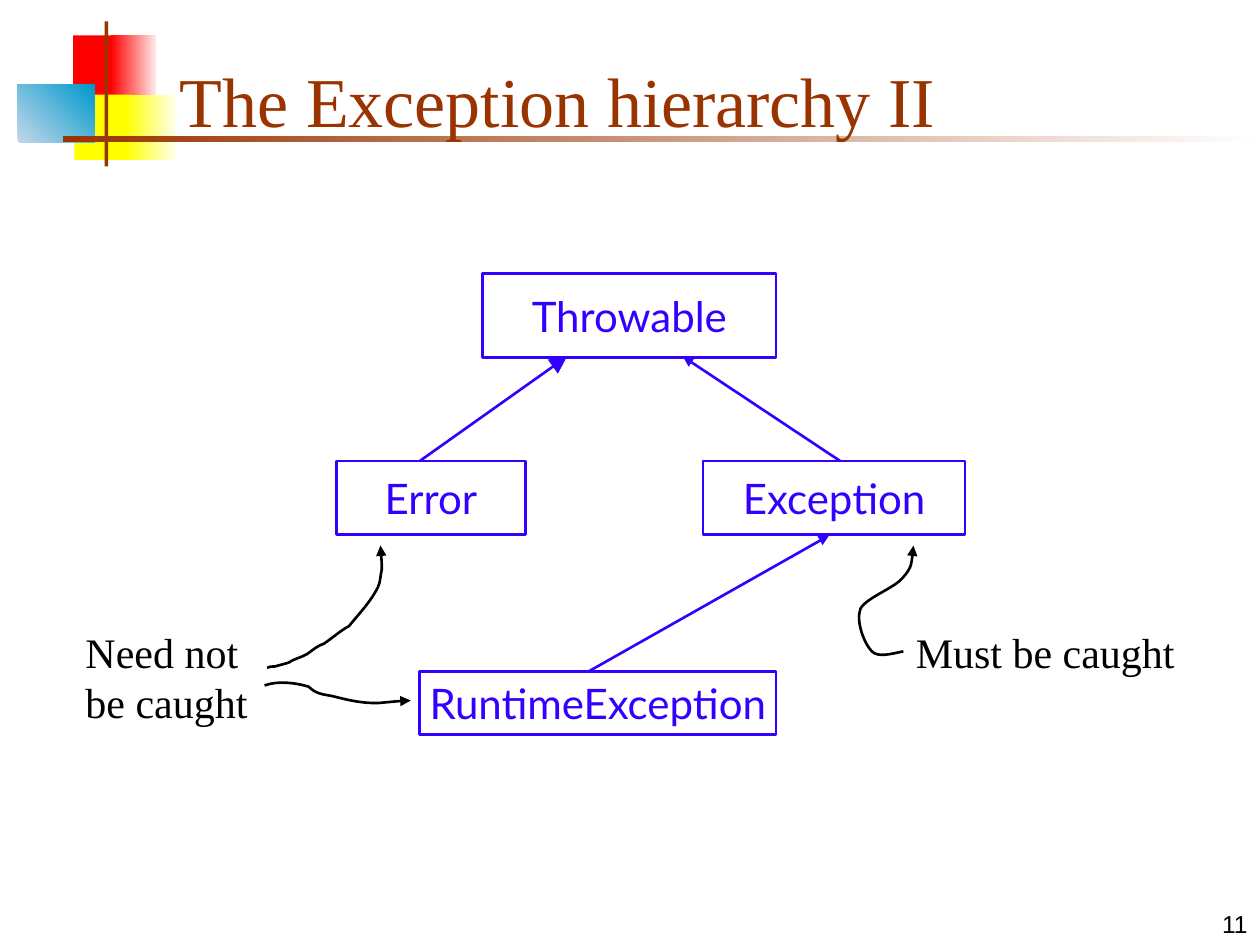
from pptx import Presentation
from pptx.dml.color import RGBColor
from pptx.enum.shapes import MSO_CONNECTOR, MSO_SHAPE
from pptx.enum.text import MSO_ANCHOR, PP_ALIGN
from pptx.oxml.ns import qn
from pptx.util import Inches, Pt
from lxml import etree

RECT = MSO_SHAPE.RECTANGLE
PROCESS = MSO_SHAPE.FLOWCHART_PROCESS
STRAIGHT = MSO_CONNECTOR.STRAIGHT
TOP, MIDDLE, BOTTOM = MSO_ANCHOR.TOP, MSO_ANCHOR.MIDDLE, MSO_ANCHOR.BOTTOM
LEFT, CENTER, RIGHT = PP_ALIGN.LEFT, PP_ALIGN.CENTER, PP_ALIGN.RIGHT

RED = RGBColor(0xFF, 0x00, 0x00)
PALE_RED = RGBColor(0xFF, 0xEA, 0xEA)
YELLOW = RGBColor(0xFF, 0xFF, 0x00)
PALE_YELLOW = RGBColor(0xFF, 0xFF, 0xF0)
PALE_BLUE = RGBColor(0xC4, 0xD8, 0xEA)
TEAL = RGBColor(0x00, 0x99, 0xCC)
BROWN = RGBColor(0x99, 0x33, 0x00)
WHITE = RGBColor(0xFF, 0xFF, 0xFF)
BLACK = RGBColor(0x00, 0x00, 0x00)
VIOLET = RGBColor(0x33, 0x00, 0xFF)

SERIF, SANS, LABEL = "Times New Roman", "Arial", "Lato"


def inches(values):
    """Convert a sequence of numbers to lengths."""
    return [Inches(v) for v in values]


def write(sp, text, size, font, color, align=LEFT, anchor=TOP, wrap=True):
    """Put one styled paragraph into a shape."""
    tf = sp.text_frame
    tf.word_wrap = wrap
    tf.vertical_anchor = anchor
    p = tf.paragraphs[0]
    p.text = text
    p.alignment = align
    p.font.size = Pt(size)
    p.font.name = font
    p.font.color.rgb = color


def add_text(shapes, box, text, size, font, color, align=LEFT, anchor=TOP):
    """Add a wrapping text box."""
    sp = shapes.add_textbox(*inches(box))
    write(sp, text, size, font, color, align, anchor)


def add_block(shapes, box, color, fade=None, angle=0):
    """Add a borderless rectangle, solid or fading to a second colour."""
    sp = shapes.add_shape(RECT, *inches(box))
    sp.shadow.inherit = False
    sp.line.fill.background()
    if fade is None:
        sp.fill.solid()
        sp.fill.fore_color.rgb = color
        return
    sp.fill.gradient()
    sp.fill.gradient_angle = angle
    for stop, rgb in zip(sp.fill.gradient_stops, (color, fade)):
        stop.color.rgb = rgb


def style_arrow(sp, color, size="med"):
    """Colour a line and give its end a triangular head."""
    sp.line.color.rgb = color
    sp.line.width = Pt(1.5)
    etree.SubElement(sp.line._get_or_add_ln(), qn("a:tailEnd"),
                     type="triangle", w=size, len=size)


def add_node(shapes, box, name):
    """Add an outlined class box."""
    sp = shapes.add_shape(PROCESS, *inches(box))
    sp.shadow.inherit = False
    sp.fill.background()
    sp.line.color.rgb = VIOLET
    sp.line.width = Pt(1.5)
    write(sp, name, 24, LABEL, VIOLET, CENTER, MIDDLE, wrap=False)


def add_arrow(shapes, start, end, size):
    """Add a straight arrow from subclass to superclass."""
    sp = shapes.add_connector(STRAIGHT, *inches(start + end))
    style_arrow(sp, VIOLET, size)
    etree.SubElement(sp._element.spPr, qn("a:effectLst"))


def add_curved_arrow(shapes, knots):
    """Add a black arrow along chained cubic curves."""
    points = [inches(knot) for knot in knots]
    builder = shapes.build_freeform(*points[0])
    builder.add_line_segments(points[1:], close=False)
    sp = builder.convert_to_shape()
    segments = list(sp._element.iter(qn("a:lnTo")))
    for i in range(0, len(segments), 3):
        curve = etree.Element(qn("a:cubicBezTo"))
        segments[i].addprevious(curve)
        for segment in segments[i:i + 3]:
            curve.append(segment[0])
            segment.getparent().remove(segment)
    sp.shadow.inherit = False
    sp.fill.background()
    style_arrow(sp, BLACK)


def add_decoration(shapes, left, top):
    """Draw the coloured squares and bars beside the title."""
    blocks = [
        ((0.44, 0.11, 0.35, 0.52), RED, None, 0),
        ((0.74, 0.11, 0.36, 0.52), RED, PALE_RED, 0),
        ((0.45, 0.58, 0.46, 0.52), YELLOW, None, 0),
        ((0.86, 0.58, 0.4, 0.52), YELLOW, PALE_YELLOW, 0),
        ((0, 0.5, 0.61, 0.46), PALE_BLUE, TEAL, 45),
        ((0.69, 0, 0.03, 1.15), BROWN, None, 0),
        ((0.36, 0.91, 9.5, 0.05), BROWN, WHITE, 0),
    ]
    for (x, y, w, h), color, fade, angle in blocks:
        add_block(shapes, (left + x, top + y, w, h), color, fade, angle)


def add_hierarchy(slide, left, top):
    """Draw the class boxes and inheritance arrows as one group."""
    shapes = slide.shapes.add_group_shape().shapes
    nodes = [
        ("Throwable", 1.16, 0, 2.33, 0.67),
        ("Error", 0, 1.49, 1.5, 0.58),
        ("Exception", 2.91, 1.49, 2.08, 0.58),
        ("RuntimeException", 0.66, 3.16, 2.83, 0.5),
    ]
    for name, x, y, w, h in nodes:
        add_node(shapes, (left + x, top + y, w, h), name)
    arrows = [
        ((0.66, 1.49), (1.83, 0.66), "lg"),
        ((4, 1.49), (2.75, 0.66), "med"),
        ((2, 3.16), (3.91, 2.08), "med"),
    ]
    for (x1, y1), (x2, y2), size in arrows:
        add_arrow(shapes, (left + x1, top + y1), (left + x2, top + y2), size)


def add_note(slide, box, text, curves):
    """Group a remark with curved arrows placed relative to its box."""
    shapes = slide.shapes.add_group_shape().shapes
    left, top = box[:2]
    add_text(shapes, box, text, 24, SERIF, BLACK)
    for knots in curves:
        add_curved_arrow(shapes, [(left + x, top + y) for x, y in knots])


def main():
    """Build and save the slide."""
    prs = Presentation()
    prs.slide_width, prs.slide_height = Inches(10), Inches(7.5)
    slide = prs.slides.add_slide(prs.slide_layouts[6])
    add_decoration(slide.shapes, 0.14, 0.17)
    add_text(slide.shapes, (1.33, 0.25, 8.52, 0.92),
             "The Exception hierarchy II", 40, SERIF, BROWN, anchor=BOTTOM)
    add_text(slide.shapes, (7.92, 7, 2.08, 0.5), "11", 14, SANS, BLACK,
             RIGHT, BOTTOM)
    add_hierarchy(slide, 2.67, 2.17)
    to_exception = [
        (0, 0.25), (-0.1, 0.27), (-0.2, 0.3), (-0.25, 0.25),
        (-0.31, 0.19), (-0.38, 0.01), (-0.34, -0.09),
        (-0.29, -0.18), (-0.07, -0.25), (0, -0.34),
        (0.07, -0.42), (0.07, -0.5), (0.08, -0.59)]
    to_error = [
        (1.54, 0.38), (1.56, 0.37), (1.58, 0.37), (1.6, 0.37),
        (1.64, 0.36), (1.71, 0.34), (1.71, 0.34),
        (1.75, 0.31), (1.81, 0.3), (1.86, 0.27),
        (1.9, 0.24), (1.95, 0.2), (1.99, 0.19),
        (2.05, 0.15), (2.13, 0.08), (2.19, 0.05),
        (2.27, -0.05), (2.36, -0.14), (2.42, -0.26),
        (2.44, -0.3), (2.44, -0.36), (2.45, -0.4),
        (2.45, -0.47), (2.44, -0.59), (2.44, -0.59)]
    to_runtime = [
        (1.52, 0.52), (1.63, 0.48), (1.77, 0.5), (1.87, 0.53),
        (1.94, 0.6), (2.01, 0.59), (2.08, 0.61),
        (2.2, 0.64), (2.29, 0.66), (2.41, 0.66),
        (2.43, 0.66), (2.61, 0.64), (2.68, 0.64)]
    add_note(slide, (7.17, 4.92, 2.33, 0.5), "Must be caught", [to_exception])
    add_note(slide, (0.58, 4.92, 1.58, 0.9), "Need not be caught",
             [to_error, to_runtime])
    prs.save("out.pptx")


if __name__ == "__main__":
    main()
